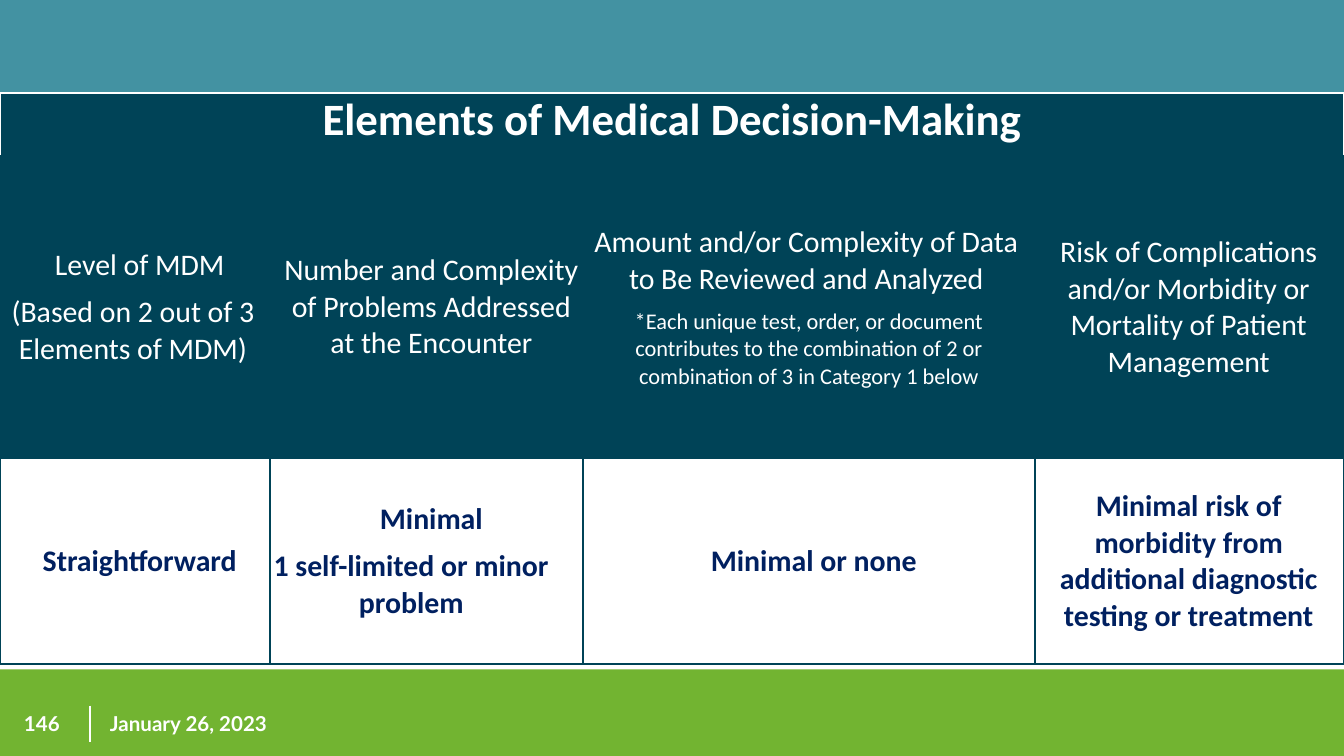
"""Build the medical decision-making elements slide."""
from typing import NamedTuple

from lxml import etree
from pptx import Presentation
from pptx.dml.color import RGBColor
from pptx.enum import shapes, text
from pptx.oxml import ns
from pptx.util import Inches, Pt

COLORS = {"teal": "4392A2", "green": "72B431", "dark": "004357",
          "navy": "002060", "white": "FFFFFF"}


class Bar(NamedTuple):
    top: float
    height: float
    color: str
    line: float = 0


class Label(NamedTuple):
    left: float
    width: float
    words: str


class Para(NamedTuple):
    words: str
    size: float = 16
    left: float = 0.07
    right: float = 0


BARS = [Bar(4.98, 0.65, "green"), Bar(0, 0.73, "teal", 2)]
LABELS = [Label(0.08, 0.61, "146"), Label(0.72, 2, "January 26, 2023")]
COLUMNS = [2.01, 2.33, 3.36, 2.3]
ROWS = [0.47, 2.25, 1.53]
TITLE = Para("Elements of Medical Decision-Making", 24, 0)
HEADERS = [
    [Para("Level of MDM"),
     Para("(Based on 2 out of 3 Elements of MDM)", right=0.1)],
    [Para("Number and Complexity of Problems Addressed at the Encounter")],
    [Para("Amount and/or Complexity of Data to Be Reviewed and Analyzed", right=0.11),
     Para("*Each unique test, order, or document contributes to the combination "
          "of 2 or combination of 3 in Category 1 below", 12, right=0.07)],
    [Para("Risk of Complications and/or Morbidity or Mortality of Patient Management",
          right=0.08)],
]
LEVELS = [
    [Para("Straightforward")],
    [Para("Minimal"), Para("1 self-limited or minor problem", left=0, right=0.23)],
    [Para("Minimal or none")],
    [Para("Minimal risk of morbidity from additional diagnostic testing or treatment",
          right=0.08)],
]


def rgb(name: str) -> RGBColor:
    return RGBColor.from_string(COLORS[name])


def set_font(p, name: str, size: float, color: str, bold: bool) -> None:
    p.font.name, p.font.size, p.font.bold = name, Pt(size), bold
    p.font.color.rgb = rgb(color)


def add_bar(s, bar: Bar) -> None:
    sp = s.shapes.add_shape(shapes.MSO_SHAPE.RECTANGLE, 0, Inches(bar.top),
                            Inches(10), Inches(bar.height))
    sp.shadow.inherit = False
    sp.fill.solid()
    sp.fill.fore_color.rgb = rgb(bar.color)
    if bar.line:
        sp.line.color.rgb = rgb(bar.color)
        sp.line.width = Pt(bar.line)
    else:
        sp.line.fill.background()


def add_divider(s) -> None:
    line = s.shapes.add_connector(shapes.MSO_CONNECTOR.STRAIGHT, Inches(0.67),
                                  Inches(5.25), Inches(0.67), Inches(5.52))
    line.line.color.rgb = rgb("white")
    line.line.width = Pt(1)
    etree.SubElement(line._element.spPr, ns.qn("a:effectLst"))


def add_label(s, label: Label) -> None:
    sp = s.shapes.add_textbox(Inches(label.left), Inches(5.25),
                              Inches(label.width), Inches(0.27))
    tf = sp.text_frame
    tf.word_wrap = True
    tf.vertical_anchor = text.MSO_ANCHOR.MIDDLE
    p = tf.paragraphs[0]
    p.text = label.words
    set_font(p, "Lato", 11, "white", True)


def set_borders(cell, colors: dict[str, str]) -> None:
    tc_pr = cell._tc.get_or_add_tcPr()
    for i, (side, color) in enumerate(colors.items()):
        ln = etree.Element(ns.qn(f"a:ln{side}"), w=str(Pt(1)))
        fill = etree.SubElement(ln, ns.qn("a:solidFill"))
        etree.SubElement(fill, ns.qn("a:srgbClr"), val=COLORS[color])
        tc_pr.insert(i, ln)


def fill_cell(cell, paras: list[Para], fill: str, color: str, bold: bool,
              anchor: text.MSO_ANCHOR = text.MSO_ANCHOR.MIDDLE) -> None:
    cell.margin_left = cell.margin_right = cell.margin_top = cell.margin_bottom = 0
    cell.vertical_anchor = anchor
    cell.fill.solid()
    cell.fill.fore_color.rgb = rgb(fill)
    tf = cell.text_frame
    for i, para in enumerate(paras):
        p = tf.add_paragraph() if i else tf.paragraphs[0]
        p.text = para.words
        p.alignment = text.PP_ALIGN.CENTER
        if i:
            p.space_before = Pt(6)
        p_pr = p._p.get_or_add_pPr()
        p_pr.set("marL", str(Inches(para.left)))
        p_pr.set("marR", str(Inches(para.right)))
        set_font(p, "Calibri", para.size, color, bold)


def add_elements_table(s) -> None:
    table = s.shapes.add_table(len(ROWS), len(COLUMNS), 0, Inches(0.69),
                               Inches(sum(COLUMNS)), Inches(sum(ROWS))).table
    table.first_row = table.horz_banding = False
    for column, width in zip(table.columns, COLUMNS):
        column.width = Inches(width)
    for row, height in zip(table.rows, ROWS):
        row.height = Inches(height)
    table.cell(0, 0).merge(table.cell(0, len(COLUMNS) - 1))
    fill_cell(table.cell(0, 0), [TITLE], "dark", "white", True, text.MSO_ANCHOR.TOP)
    for c, (header, level) in enumerate(zip(HEADERS, LEVELS)):
        fill_cell(table.cell(1, c), header, "dark", "white", False)
        fill_cell(table.cell(2, c), level, "white", "navy", True)
        edge = "white" if c in (0, len(COLUMNS) - 1) else "dark"
        set_borders(table.cell(0, c), {"L": edge, "R": edge, "T": "white", "B": "dark"})
        for r in (1, 2):
            set_borders(table.cell(r, c), dict.fromkeys("LRTB", "dark"))


def main() -> None:
    prs = Presentation()
    prs.slide_width = Inches(10)
    prs.slide_height = prs.slide_width * 9 // 16
    s = prs.slides.add_slide(prs.slide_layouts[6])
    for bar in BARS:
        add_bar(s, bar)
    add_divider(s)
    for label in LABELS:
        add_label(s, label)
    add_elements_table(s)
    prs.save("out.pptx")


if __name__ == "__main__":
    main()
